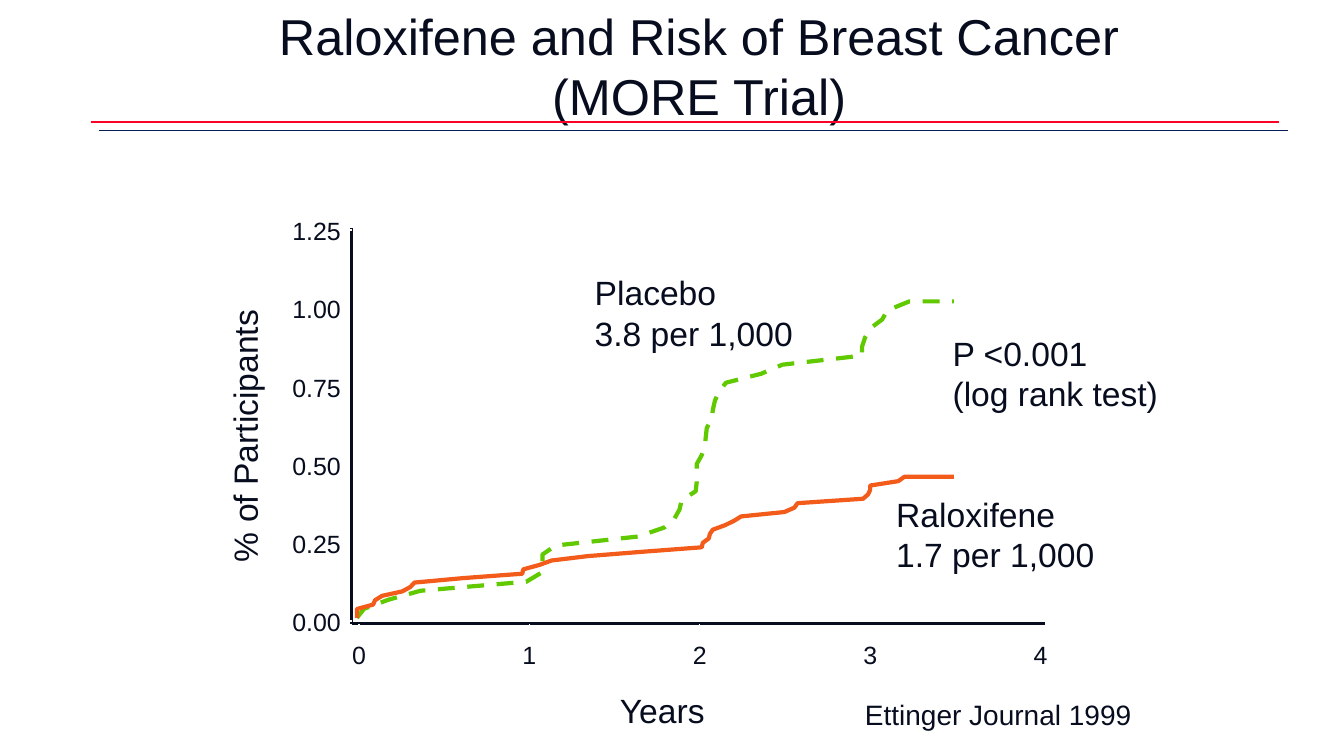
from dataclasses import dataclass
from lxml.etree import SubElement
from pptx import Presentation
from pptx.dml.color import RGBColor
from pptx.enum.dml import MSO_LINE
from pptx.enum.shapes import MSO_CONNECTOR
from pptx.enum.text import MSO_ANCHOR, MSO_AUTO_SIZE, PP_ALIGN
from pptx.oxml.ns import qn
from pptx.util import Inches, Pt


@dataclass(frozen=True)
class Theme:
    font: str = "Arial"
    ink: str = "070D1E"
    rule: str = "FC0128"
    rule_shadow: str = "081D58"
    tick: str = "FFFFFF"
    placebo: str = "60C900"
    raloxifene: str = "F35B1B"
    title_size: float = 36
    label_size: float = 24
    source_size: float = 20
    scale_size: float = 17.8


THEME = Theme()

AXIS_LEFT, AXIS_RIGHT = 3.49, 10.36
AXIS_TOP, AXIS_BOTTOM = 2.26, 6.19
YEAR_ZERO, YEAR_STEP = 3.56, 1.69
SHARE_ZERO, SHARE_TOP = 6.16, 2.28
SHARE_LABELS = ["0.00", "0.25", "0.50", "0.75", "1.00", "1.25"]
SHARE_STEP = (SHARE_ZERO - SHARE_TOP) / (len(SHARE_LABELS) - 1)
CURVE_START, CURVE_END = 6.13, 9.46

PLACEBO_EVENTS = [
    3.54, 3.61, 3.85, 4.17, 5.22, 5.37, 5.38, 5.38, 5.51, 6.33, 6.59, 6.69,
    6.74, 6.76, 6.9, 6.91, 6.91, 6.91, 6.96, 6.99, 7, 7.01, 7.06, 7.07,
    7.09, 7.13, 7.2, 7.55, 7.76, 8.55, 8.55, 8.58, 8.63, 8.75, 8.8, 9.02,
]
RALOXIFENE_EVENTS = [
    3.54, 3.54, 3.54, 3.7, 3.72, 3.79, 3.99, 4.07, 4.11, 4.59, 5.18,
    5.19, 5.35, 5.47, 5.83, 6.38, 6.96, 6.97, 7.03, 7.04, 7.07, 7.19,
    7.28, 7.35, 7.78, 7.88, 7.91, 8.56, 8.61, 8.63, 8.63, 8.91, 8.97,
]


def place(shape, left, top, width, height):
    shape.left, shape.top = Inches(left), Inches(top)
    shape.width, shape.height = Inches(width), Inches(height)


def format_text(frame, size, align):
    for paragraph in frame.paragraphs:
        paragraph.alignment = align
        paragraph.font.name = THEME.font
        paragraph.font.size = Pt(size)
        paragraph.font.color.rgb = RGBColor.from_string(THEME.ink)


def set_title(slide, text):
    title = slide.shapes.title
    place(title, 1.78, 0, 10.31, 1.31)
    frame = title.text_frame
    frame.text = text
    frame.word_wrap = True
    frame.auto_size = MSO_AUTO_SIZE.NONE
    frame.vertical_anchor = MSO_ANCHOR.TOP
    format_text(frame, THEME.title_size, PP_ALIGN.CENTER)


def add_label(slide, text, box, size=THEME.label_size, align=PP_ALIGN.LEFT, wrap=False):
    shape = slide.shapes.add_textbox(*map(Inches, box))
    frame = shape.text_frame
    frame.text = text
    frame.word_wrap = wrap
    format_text(frame, size, align)
    return shape


def add_scale_label(slide, text, left, top, width, align):
    shape = add_label(slide, text, (left, top, width, 0.39), THEME.scale_size, align)
    frame = shape.text_frame
    frame.margin_left = frame.margin_right = Inches(0.09)
    frame.margin_top = frame.margin_bottom = Inches(0.04)


def add_line(slide, start, end, color, width):
    line = slide.shapes.add_connector(
        MSO_CONNECTOR.STRAIGHT, *map(Inches, (*start, *end)))
    line.line.color.rgb = RGBColor.from_string(color)
    line.line.width = Pt(width)
    return SubElement(line._element.spPr, qn("a:effectLst"))


def add_title_rule(slide):
    effects = add_line(slide, (0.9, 1.21), (12.69, 1.21), THEME.rule, 1)
    shadow = SubElement(effects, qn("a:outerShdw"), dist=str(Pt(8.5)),
                        dir=str(45 * 60000), algn="ctr", rotWithShape="0")
    SubElement(shadow, qn("a:srgbClr"), val=THEME.rule_shadow)


def add_year_tick(slide, year):
    x = YEAR_ZERO + year * YEAR_STEP
    add_line(slide, (x, AXIS_BOTTOM), (x, AXIS_BOTTOM + 0.07), THEME.tick, 1)


def add_share_tick(slide, index):
    y = SHARE_ZERO - index * SHARE_STEP
    add_line(slide, (AXIS_LEFT - 0.04, y), (AXIS_LEFT, y), THEME.tick, 1)


def add_axes(slide):
    corner = (AXIS_LEFT, AXIS_BOTTOM)
    for end in ((AXIS_LEFT, AXIS_TOP), (AXIS_RIGHT, AXIS_BOTTOM)):
        add_line(slide, corner, end, THEME.ink, 2.25)


def add_scales(slide):
    for index, text in enumerate(SHARE_LABELS):
        top = SHARE_ZERO - index * SHARE_STEP - 0.18
        add_scale_label(slide, text, 2.8, top, 0.67, PP_ALIGN.RIGHT)
    for year in range(5):
        left = YEAR_ZERO + year * YEAR_STEP - 0.16
        add_scale_label(slide, str(year), left, 6.3, 0.32, PP_ALIGN.CENTER)


def add_curve(slide, events, top, color, dash=None):
    rise = (CURVE_START - top) / (len(events) - 1)
    points = [(x, CURVE_START - index * rise) for index, x in enumerate(events)]
    points.append((CURVE_END, top))
    points = [(Inches(x), Inches(y)) for x, y in points]
    builder = slide.shapes.build_freeform(*points[0])
    builder.add_line_segments(points[1:], close=False)
    curve = builder.convert_to_shape()
    curve.shadow.inherit = False
    curve.fill.background()
    curve.line.color.rgb = RGBColor.from_string(color)
    curve.line.width = Pt(3)
    if dash:
        curve.line.dash_style = dash


def main():
    presentation = Presentation()
    presentation.slide_width = Inches(13.33)
    presentation.slide_height = Inches(7.5)
    slide = presentation.slides.add_slide(presentation.slide_layouts[5])

    add_title_rule(slide)
    set_title(slide, "Raloxifene and Risk of Breast Cancer (MORE Trial)")

    for index in range(1, 5):
        add_share_tick(slide, index)
    for year in (3, 4):
        add_year_tick(slide, year)
    add_scales(slide)
    add_curve(slide, PLACEBO_EVENTS, 2.99, THEME.placebo, MSO_LINE.DASH)
    add_curve(slide, RALOXIFENE_EVENTS, 4.73, THEME.raloxifene)
    add_axes(slide)
    for year in range(3):
        add_year_tick(slide, year)
    for index in (0, 5):
        add_share_tick(slide, index)

    add_label(slide, "Ettinger Journal 1999", (8.48, 6.87, 2.94, 0.44),
              THEME.source_size, wrap=True)
    add_label(slide, "% of Participants", (0.97, 3.97, 2.91, 0.5)).rotation = 270
    add_label(slide, "Placebo\n3.8 per 1,000", (5.8, 2.65, 2.19, 0.91))
    add_label(slide, "P <0.001\n(log rank test)", (9.35, 3.25, 2.26, 0.91))
    add_label(slide, "Raloxifene\n1.7 per 1,000", (8.79, 4.85, 2.19, 0.91))
    add_label(slide, "Years", (6.05, 6.8, 1.05, 0.5))

    presentation.save("out.pptx")


if __name__ == "__main__":
    main()
